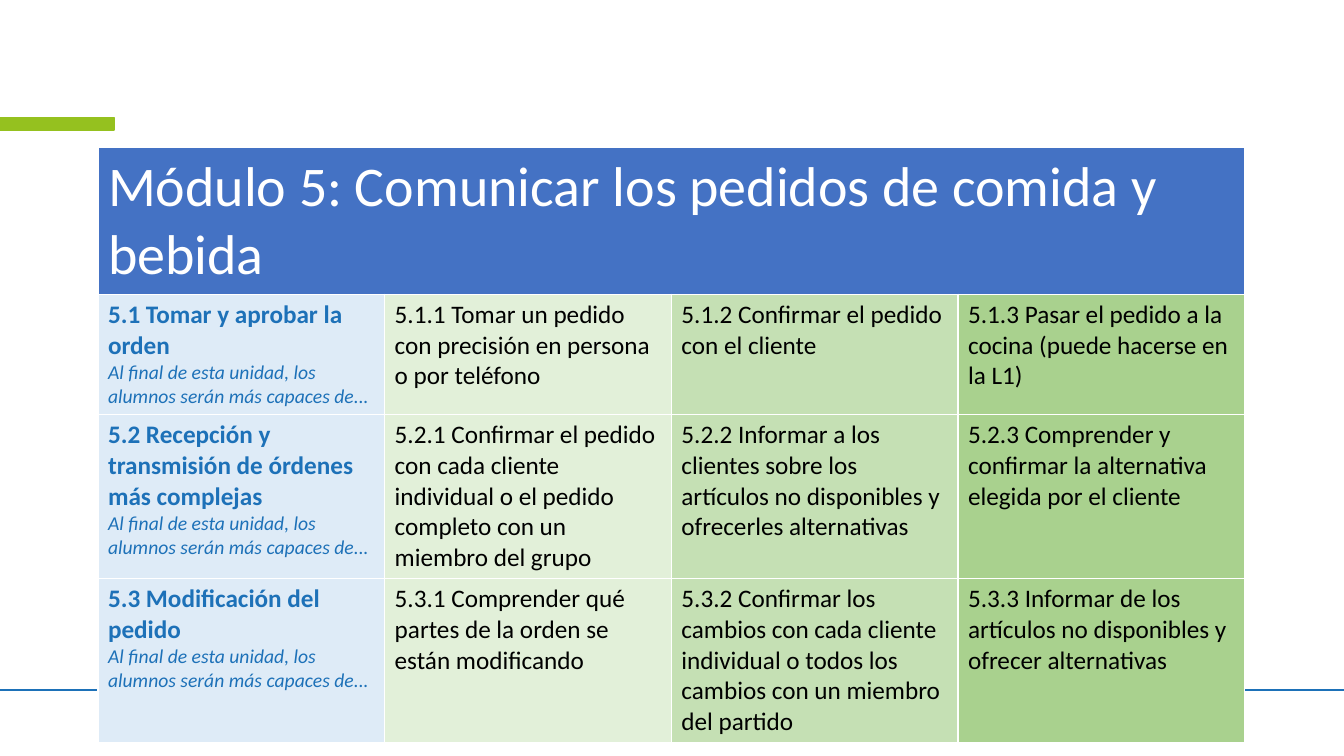
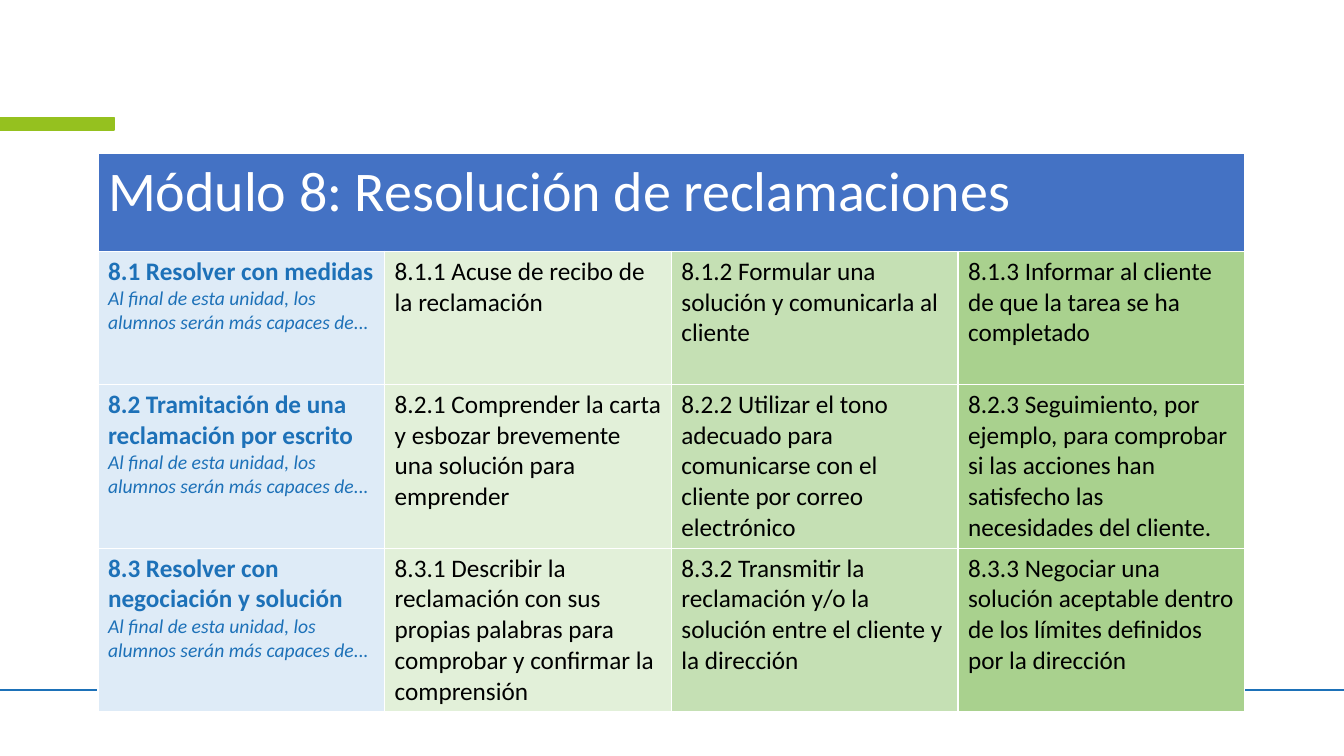
from dataclasses import dataclass

from lxml.etree import SubElement
from pptx import Presentation
from pptx.dml.color import RGBColor as Rgb
from pptx.enum.shapes import MSO_CONNECTOR as Connector, MSO_SHAPE as Shape
from pptx.oxml.ns import qn
from pptx.util import Pt


@dataclass(frozen=True)
class Theme:
    font: str = "Calibri"
    title_size: int = 40
    body_size: int = 18
    note_size: int = 14
    white: str = "FFFFFF"
    black: str = "000000"
    blue: str = "1D71B8"
    green: str = "95C11F"
    header: str = "4472C4"
    columns: tuple = ("DEEBF7", "E2F0D9", "C5E0B4", "A9D18E")


THEME = Theme()
PAGE_WIDTH, PAGE_HEIGHT = 960, 540
TABLE_LEFT, COLUMN_WIDTH = 70, 204.8
FOOTER_Y = 493
UNIT_NOTE = "Al final de esta unidad, los alumnos serán más capaces de..."

# Each module: title, table top, row heights, then one row per unit.
MODULES = [
    ("Módulo 5: Comunicar los pedidos de comida y bebida", 105.5, (104, 86, 117, 117), [
        ("5.1 Tomar y aprobar la orden",
         "5.1.1 Tomar un pedido con precisión en persona o por teléfono",
         "5.1.2 Confirmar el pedido con el cliente",
         "5.1.3 Pasar el pedido a la cocina (puede hacerse en la L1)"),
        ("5.2 Recepción y transmisión de órdenes más complejas",
         "5.2.1 Confirmar el pedido con cada cliente individual o el pedido completo "
         "con un miembro del grupo",
         "5.2.2 Informar a los clientes sobre los artículos no disponibles y "
         "ofrecerles alternativas",
         "5.2.3 Comprender y confirmar la alternativa elegida por el cliente"),
        ("5.3 Modificación del pedido",
         "5.3.1 Comprender qué partes de la orden se están modificando",
         "5.3.2 Confirmar los cambios con cada cliente individual o todos los cambios "
         "con un miembro del partido",
         "5.3.3 Informar de los artículos no disponibles y ofrecer alternativas"),
    ]),
    ("Módulo 8: Resolución de reclamaciones", 109.5, (70, 95, 117, 117), [
        ("8.1 Resolver con medidas",
         "8.1.1 Acuse de recibo de la reclamación",
         "8.1.2 Formular una solución y comunicarla al cliente",
         "8.1.3 Informar al cliente de que la tarea se ha completado"),
        ("8.2 Tramitación de una reclamación por escrito",
         "8.2.1 Comprender la carta y esbozar brevemente una solución para emprender",
         "8.2.2 Utilizar el tono adecuado para comunicarse con el cliente por correo "
         "electrónico",
         "8.2.3 Seguimiento, por ejemplo, para comprobar si las acciones han "
         "satisfecho las necesidades del cliente."),
        ("8.3 Resolver con negociación y solución",
         "8.3.1 Describir la reclamación con sus propias palabras para comprobar y "
         "confirmar la comprensión",
         "8.3.2 Transmitir la reclamación y/o la solución entre el cliente y la dirección",
         "8.3.3 Negociar una solución aceptable dentro de los límites definidos por "
         "la dirección"),
    ]),
]


def fill_cell(cell, fill, lines):
    """Fill a cell and write its lines, each (text, size, colour, bold, italic)."""
    cell.fill.solid()
    cell.fill.fore_color.rgb = Rgb.from_string(fill)
    cell.text_frame.text = "\n".join(line[0] for line in lines)
    for para, (_, size, colour, bold, italic) in zip(cell.text_frame.paragraphs, lines):
        for span in para.runs:
            span.font.name = THEME.font
            span.font.size = Pt(size)
            span.font.color.rgb = Rgb.from_string(colour)
            span.font.bold = bold
            span.font.italic = italic


def add_frame(page):
    """Draw the footer rule and the green accent bar."""
    rule = page.shapes.add_connector(
        Connector.STRAIGHT, 0, Pt(FOOTER_Y), Pt(PAGE_WIDTH), Pt(FOOTER_Y))
    rule.line.color.rgb = Rgb.from_string(THEME.blue)
    rule.line.width = Pt(1)
    SubElement(rule.element.spPr, qn("a:effectLst"))

    bar = page.shapes.add_shape(Shape.RECTANGLE, 0, Pt(84), Pt(81.5), Pt(9))
    bar.shadow.inherit = False
    bar.fill.solid()
    bar.fill.fore_color.rgb = Rgb.from_string(THEME.green)
    bar.line.color.rgb = Rgb.from_string(THEME.green)
    bar.line.width = Pt(1)


deck = Presentation()
deck.slide_width, deck.slide_height = Pt(PAGE_WIDTH), Pt(PAGE_HEIGHT)

for title, top, heights, units in MODULES:
    page = deck.slides.add_slide(deck.slide_layouts[6])
    add_frame(page)

    column_count = len(THEME.columns)
    table = page.shapes.add_table(
        len(heights), column_count, Pt(TABLE_LEFT), Pt(top),
        Pt(COLUMN_WIDTH * column_count), Pt(sum(heights))).table
    for column in table.columns:
        column.width = Pt(COLUMN_WIDTH)
    for row, height in zip(table.rows, heights):
        row.height = Pt(height)

    table.cell(0, 0).merge(table.cell(0, column_count - 1))
    fill_cell(table.cell(0, 0), THEME.header,
              [(title, THEME.title_size, THEME.white, False, False)])

    for row_index, (unit, *goals) in enumerate(units, start=1):
        fill_cell(table.cell(row_index, 0), THEME.columns[0],
                  [(unit, THEME.body_size, THEME.blue, True, False),
                   (UNIT_NOTE, THEME.note_size, THEME.blue, False, True)])
        for column_index, goal in enumerate(goals, start=1):
            fill_cell(table.cell(row_index, column_index), THEME.columns[column_index],
                      [(goal, THEME.body_size, THEME.black, False, False)])

deck.save("out.pptx")
